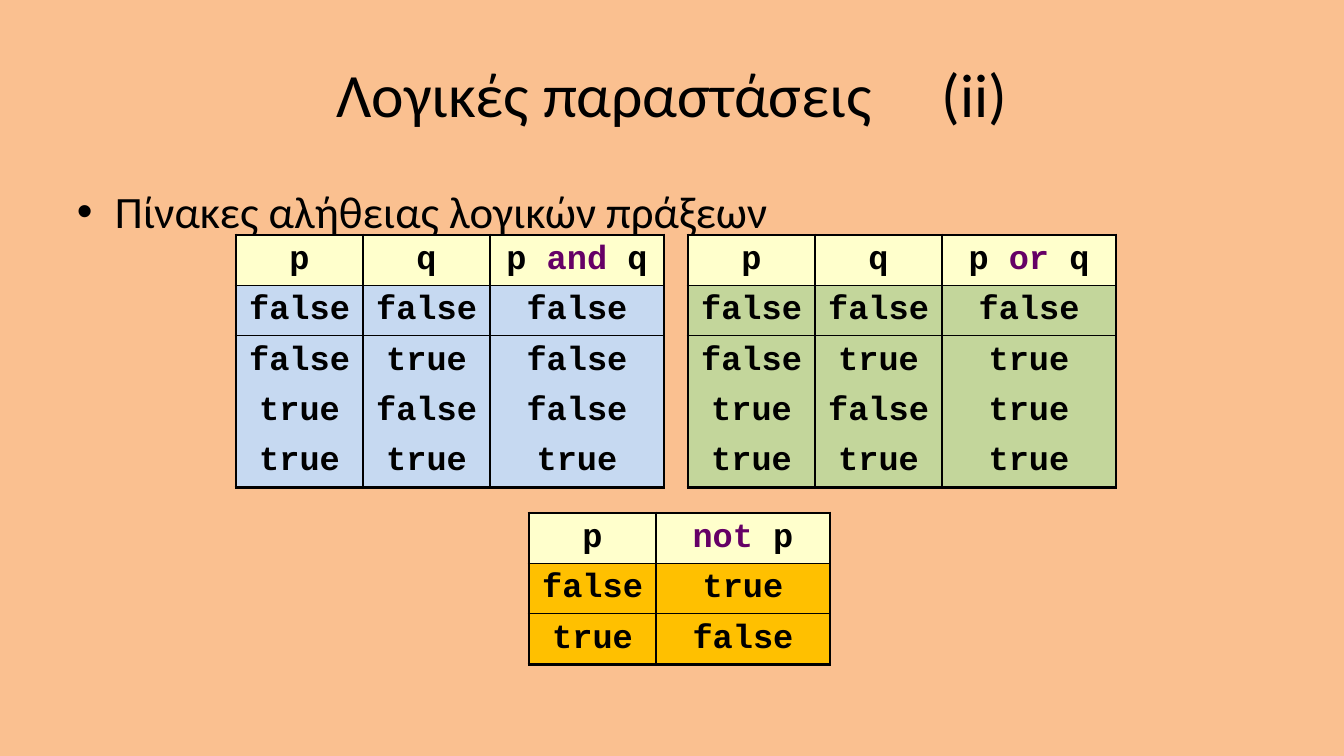
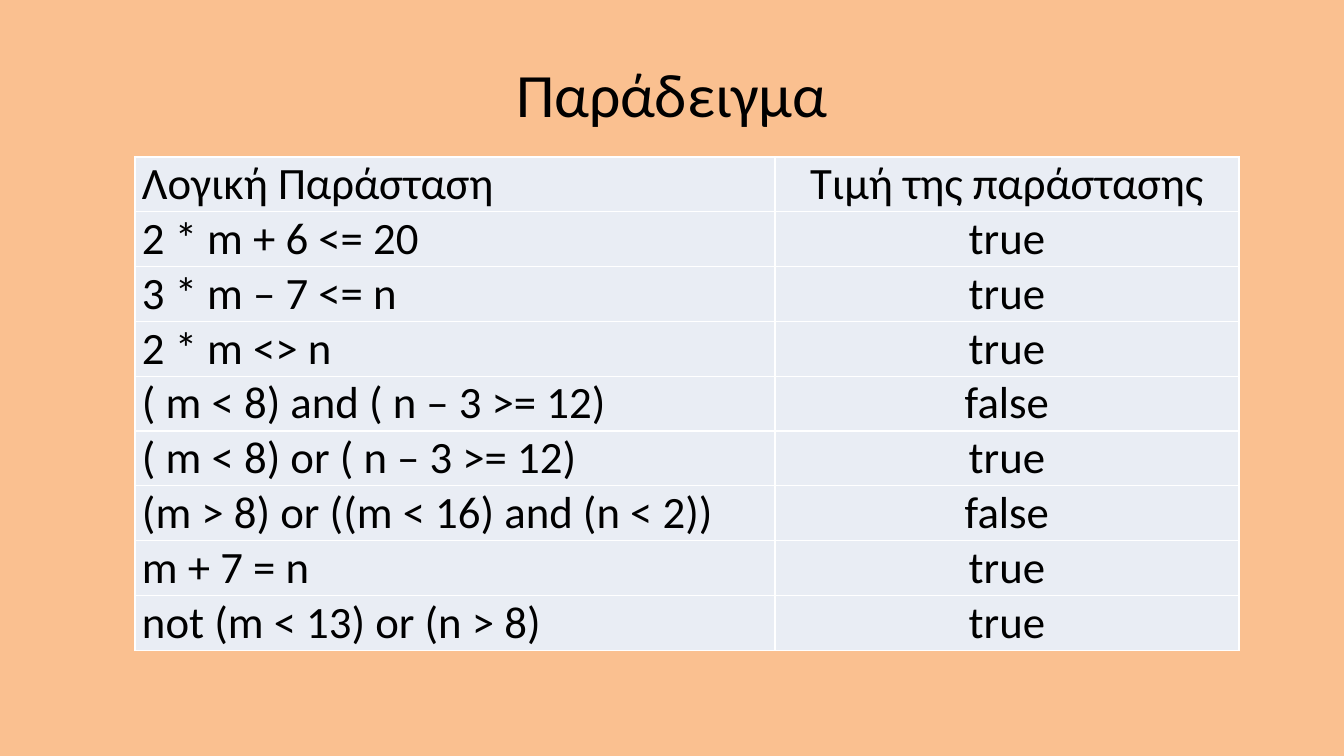
from itertools import product

from pptx import Presentation
from pptx.dml.color import RGBColor
from pptx.enum.text import MSO_ANCHOR as Anchor, PP_ALIGN as Align
from pptx.oxml.ns import qn
from pptx.util import Pt
from lxml.etree import SubElement

# Shared look
SLIDE_W, SLIDE_H = 1344, 756
SCALE = 12192000 / SLIDE_W
COLORS = {
    "background": "FAC090", "text": "000000", "keyword": "660066",
    "header": "FFFFCC", "and": "C6D9F1", "or": "C3D69B", "not": "FFC000",
    "example": "E9EDF4", "rule": "FFFFFF",
}
TEXT_FONT, CODE_FONT = "Calibri", "Courier New"
TITLE_BOX = (67, 30, 1210, 126)
PLAIN_TABLE_STYLE = "{2D5ABB26-0587-4C30-8999-92F81FD0307C}"
THICK, THIN = 2.25, 1
KEYWORDS = ("and", "or", "not")

EXAMPLES = [
    ("Λογική Παράσταση", "Τιμή της παράστασης"),
    ("2 * m + 6 <= 20", "true"),
    ("3 * m – 7 <= n", "true"),
    ("2 * m <> n", "true"),
    ("( m < 8) and ( n – 3 >= 12)", "false"),
    ("( m < 8) or ( n – 3 >= 12)", "true"),
    ("(m > 8) or ((m < 16) and (n < 2))", "false"),
    ("m + 7 = n", "true"),
    ("not (m < 13) or (n > 8)", "true"),
]


def px(length):
    return round(length * SCALE)


def rgb(name):
    return RGBColor.from_string(COLORS[name])


def style_font(paragraph, name, size, bold=False):
    font = paragraph.font
    font.name, font.size, font.bold = name, Pt(size), bold
    font.color.rgb = rgb("text")


def add_titled_slide(presentation, text):
    slide = presentation.slides.add_slide(presentation.slide_layouts[5])
    title = slide.shapes.title
    title.left, title.top, title.width, title.height = map(px, TITLE_BOX)
    title.text_frame.text = text
    title.text_frame.vertical_anchor = Anchor.MIDDLE
    paragraph = title.text_frame.paragraphs[0]
    paragraph.alignment = Align.CENTER
    style_font(paragraph, TEXT_FONT, 44)
    if "\t" in text:
        tabs = SubElement(paragraph._p.get_or_add_pPr(), qn("a:tabLst"))
        # a:tabLst has to come before the default run properties
        paragraph._p.pPr.insert(0, tabs)
        SubElement(tabs, qn("a:tab"), pos=str(px(605)), algn="l")
    return slide


def add_bullet(slide, box, text):
    frame = slide.shapes.add_textbox(*map(px, box)).text_frame
    frame.word_wrap = True
    frame.text = text
    paragraph = frame.paragraphs[0]
    style_font(paragraph, TEXT_FONT, 32)
    properties = paragraph._p.get_or_add_pPr()
    properties.set("marL", str(px(38)))
    properties.set("indent", str(-px(38)))
    bullet = SubElement(properties, qn("a:buChar"), char="•")
    font = SubElement(properties, qn("a:buFont"), typeface="Arial")
    properties.insert(0, font)
    properties.insert(1, bullet)


def add_plain_table(slide, left, top, widths, row_height, row_count):
    frame = slide.shapes.add_table(
        row_count, len(widths), px(left), px(top),
        px(sum(widths)), px(row_height * row_count))
    table = frame.table
    table.first_row = table.horz_banding = False
    table._tbl.tblPr.find(qn("a:tableStyleId")).text = PLAIN_TABLE_STYLE
    for column, width in zip(table.columns, widths):
        column.width = px(width)
    for row in table.rows:
        row.height = px(row_height)
    return table


def style_cell(cell, fill, line_color, **borders):
    """Fill a cell and draw the given sides (L, R, T, B) in points."""
    properties = cell._tc.get_or_add_tcPr()
    for side in "LRTB":
        if borders.get(side):
            line = SubElement(properties, qn(f"a:ln{side}"), w=str(Pt(borders[side])))
            solid = SubElement(line, qn("a:solidFill"))
            SubElement(solid, qn("a:srgbClr"), val=COLORS[line_color])
    cell.fill.solid()
    cell.fill.fore_color.rgb = rgb(fill)


def add_truth_table(slide, left, top, widths, operator, rows):
    table = add_plain_table(slide, left, top, widths, 48, len(rows))
    last_row, last_column = len(rows) - 1, len(widths) - 1
    for (r, row), c in product(enumerate(rows), range(len(widths))):
        cell = table.cell(r, c)
        cell.vertical_anchor = Anchor.MIDDLE
        paragraph = cell.text_frame.paragraphs[0]
        paragraph.alignment = Align.CENTER
        style_font(paragraph, CODE_FONT, 24, bold=True)
        for i, word in enumerate(row[c].split()):
            run = paragraph.add_run()
            run.text = f" {word}" if i else word
            if word in KEYWORDS:
                run.font.color.rgb = rgb("keyword")
        # Thick frame, thin column lines, one thin line under the header
        style_cell(
            cell, operator if r else "header", "text",
            L=THIN if c else THICK,
            R=THICK if c == last_column else THIN,
            T={0: THICK, 1: THIN}.get(r),
            B={0: THIN, last_row: THICK}.get(r))


def truth_rows(header, function, inputs):
    rows = [(*values, function(*values)) for values in product((False, True), repeat=inputs)]
    return [header] + [[str(value).lower() for value in row] for row in rows]


def build_truth_tables(presentation):
    slide = add_titled_slide(presentation, "Λογικές παραστάσεις\t(ii)")
    add_bullet(slide, (67, 179, 1210, 65), "Πίνακες αλήθειας λογικών πράξεων")
    narrow, wide = 127, 174
    add_truth_table(slide, 236, 235, (narrow, narrow, wide), "and",
                    truth_rows(("p", "q", "p and q"), lambda p, q: p and q, 2))
    add_truth_table(slide, 688, 235, (narrow, narrow, wide), "or",
                    truth_rows(("p", "q", "p or q"), lambda p, q: p or q, 2))
    add_truth_table(slide, 529, 513, (narrow, wide), "not",
                    truth_rows(("p", "not p"), lambda p: not p, 1))


def build_examples(presentation):
    slide = add_titled_slide(presentation, "Παράδειγμα")
    table = add_plain_table(slide, 135, 157, (640, 464), 54, len(EXAMPLES))
    for (r, row), c in product(enumerate(EXAMPLES), range(2)):
        cell = table.cell(r, c)
        cell.margin_left = cell.margin_right = px(7)
        cell.margin_top = cell.margin_bottom = 0
        cell.text = row[c]
        paragraph = cell.text_frame.paragraphs[0]
        paragraph.alignment = Align.CENTER if c else Align.LEFT
        style_font(paragraph, TEXT_FONT, 32)
        style_cell(cell, "example", "rule", L=THIN, R=THIN, T=THIN, B=THIN)


def main():
    presentation = Presentation()
    presentation.slide_width, presentation.slide_height = px(SLIDE_W), px(SLIDE_H)
    background = presentation.slide_master.background.fill
    background.solid()
    background.fore_color.rgb = rgb("background")
    build_truth_tables(presentation)
    build_examples(presentation)
    presentation.save("out.pptx")


if __name__ == "__main__":
    main()
